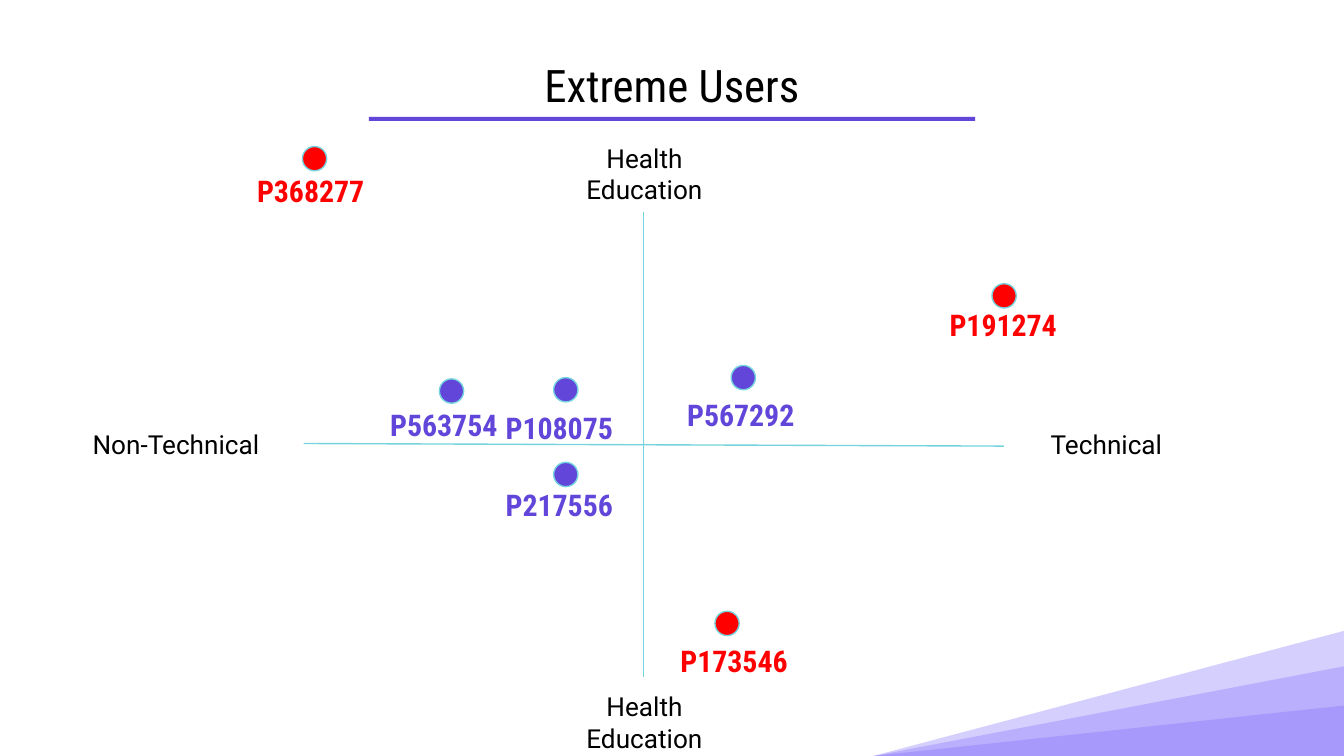
import dataclasses

import lxml.etree
import pptx
import pptx.dml.color
import pptx.enum.shapes
import pptx.enum.text
import pptx.oxml.ns
import pptx.util

Pt = pptx.util.Pt
RGB = pptx.dml.color.RGBColor.from_string
Shape = pptx.enum.shapes.MSO_SHAPE
Align = pptx.enum.text.PP_ALIGN
Anchor = pptx.enum.text.MSO_ANCHOR
qn = pptx.oxml.ns.qn


@dataclasses.dataclass(frozen=True)
class Theme:
    """Colours, fonts and type sizes of the slide."""
    ink: str = "000000"
    main: str = "6146D9"
    hot: str = "FF0000"
    edge: str = "74D3DC"
    wedge: str = "7E6CFB"
    head: str = "Roboto Condensed"
    body: str = "Roboto"
    big: float = 24
    mid: float = 16
    small: float = 14


THEME = Theme()
FRAME = {"word_wrap": True, "auto_size": pptx.enum.text.MSO_AUTO_SIZE.NONE}
FRAME.update({f"margin_{side}": Pt(7.2) for side in ("left", "top", "right", "bottom")})
TITLE = {"name": THEME.head, "size": Pt(THEME.big), "bold": False}
LABEL = {"name": THEME.body, "size": Pt(THEME.small), "bold": False}
CODE = {"name": THEME.head, "size": Pt(THEME.mid), "bold": True}

USERS = [
    ("P173546", THEME.hot, (343, 267.5), (310.6, 284.9)),
    ("P368277", THEME.hot, (122, 18.5), (83.8, 33.2)),
    ("P191274", THEME.hot, (491.4, 92), (454.8, 104.9)),
    ("P108075", THEME.main, (256.6, 142.3), (217, 160)),
    ("P567292", THEME.main, (351.7, 135.8), (314.2, 153.2)),
    ("P563754", THEME.main, (195.4, 143), (155.1, 158.5)),
    ("P217556", THEME.main, (256.6, 187.7), (217, 201.4)),
]
ENDS = [
    ("Technical", (515.8, 162.5, 93.6, 31.7), Align.LEFT),
    ("Non-Technical", (2.5, 162.5, 107.3, 31.7), Align.LEFT),
    ("Health Education", (251.6, 9.1, 107.3, 48.2), Align.CENTER),
    ("Health Education", (251.6, 302.9, 107.3, 48.2), Align.CENTER),
]
AXES = [(304.9, 53.8, 304.9, 302.9), (122.7, 177.6, 497.8, 179)]


def apply(item, style):
    """Set each attribute named in the style."""
    for key, value in style.items():
        setattr(item, key, value)


def write(shape, text, style, color, align, anchor):
    """Fill a shape with one formatted line of text."""
    frame = shape.text_frame
    apply(frame, {**FRAME, "vertical_anchor": anchor})
    frame.text = text
    line = frame.paragraphs[0]
    line.alignment = align
    font = line.runs[0].font
    apply(font, style)
    font.color.rgb = RGB(color)


def draw(slide, kind, box, color, edge=None):
    """Add a flat filled shape, outlined if an edge colour is given."""
    shape = slide.shapes.add_shape(kind, *map(Pt, box))
    shape.shadow.inherit = False
    shape.fill.solid()
    shape.fill.fore_color.rgb = RGB(color)
    if edge:
        shape.line.color.rgb = RGB(edge)
        shape.line.width = Pt(0.75)
    else:
        shape.line.fill.background()
    return shape


def corner(slide, box):
    """Stack see-through wedges on the bottom edge of the box."""
    left, top, width, height = box
    for rise in (height, 48, 27):
        place = (left, top + height - rise, width, rise)
        wedge = draw(slide, Shape.RIGHT_TRIANGLE, place, THEME.wedge)
        wedge._element.spPr.xfrm.set("flipH", "1")
        tint = wedge._element.spPr.find(".//" + qn("a:srgbClr"))
        lxml.etree.SubElement(tint, qn("a:alpha"), val="32000")


def header(slide, box):
    """Place the title with a centred rule under it."""
    left, top, width, height = box
    title = slide.shapes.title
    apply(title, dict(zip(("left", "top", "width", "height"), map(Pt, box))))
    write(title, "Extreme Users", TITLE, THEME.ink, Align.CENTER, Anchor.MIDDLE)
    span = 324.7
    rule = (left + (width - span) / 2, top + height + 4.2, span, 2.2)
    draw(slide, Shape.RECTANGLE, rule, THEME.main)


def axis(slide, start, end):
    """Draw one thin axis line."""
    line = slide.shapes.add_connector(
        pptx.enum.shapes.MSO_CONNECTOR.STRAIGHT, *map(Pt, (*start, *end)))
    line.line.color.rgb = RGB(THEME.edge)
    line.line.width = Pt(0.75)
    lxml.etree.SubElement(line._element.spPr, qn("a:effectLst"))


def user_map(slide, box):
    """Plot axes, their end labels and the users inside the box."""
    left, top = box[:2]
    for x1, y1, x2, y2 in AXES:
        axis(slide, (left + x1, top + y1), (left + x2, top + y2))
    for text, (x, y, width, height), align in ENDS:
        place = map(Pt, (left + x, top + y, width, height))
        write(slide.shapes.add_textbox(*place), text, LABEL, THEME.ink, align, Anchor.TOP)
    for code, color, dot, tag in USERS:
        place = map(Pt, (left + tag[0], top + tag[1], 78.5, 18))
        write(slide.shapes.add_textbox(*place), code, CODE, color, Align.RIGHT, Anchor.MIDDLE)
        draw(slide, Shape.OVAL, (left + dot[0], top + dot[1], 13, 13), color, THEME.edge)


def main():
    """Build and save the slide."""
    deck = pptx.Presentation()
    apply(deck, {"slide_width": Pt(720), "slide_height": Pt(405)})
    slide = deck.slides.add_slide(deck.slide_layouts[5])
    corner(slide, (468, 338, 252, 67))
    header(slide, (36, 32.4, 648, 26))
    user_map(slide, (40, 60, 620, 345))
    deck.save("out.pptx")


if __name__ == "__main__":
    main()
